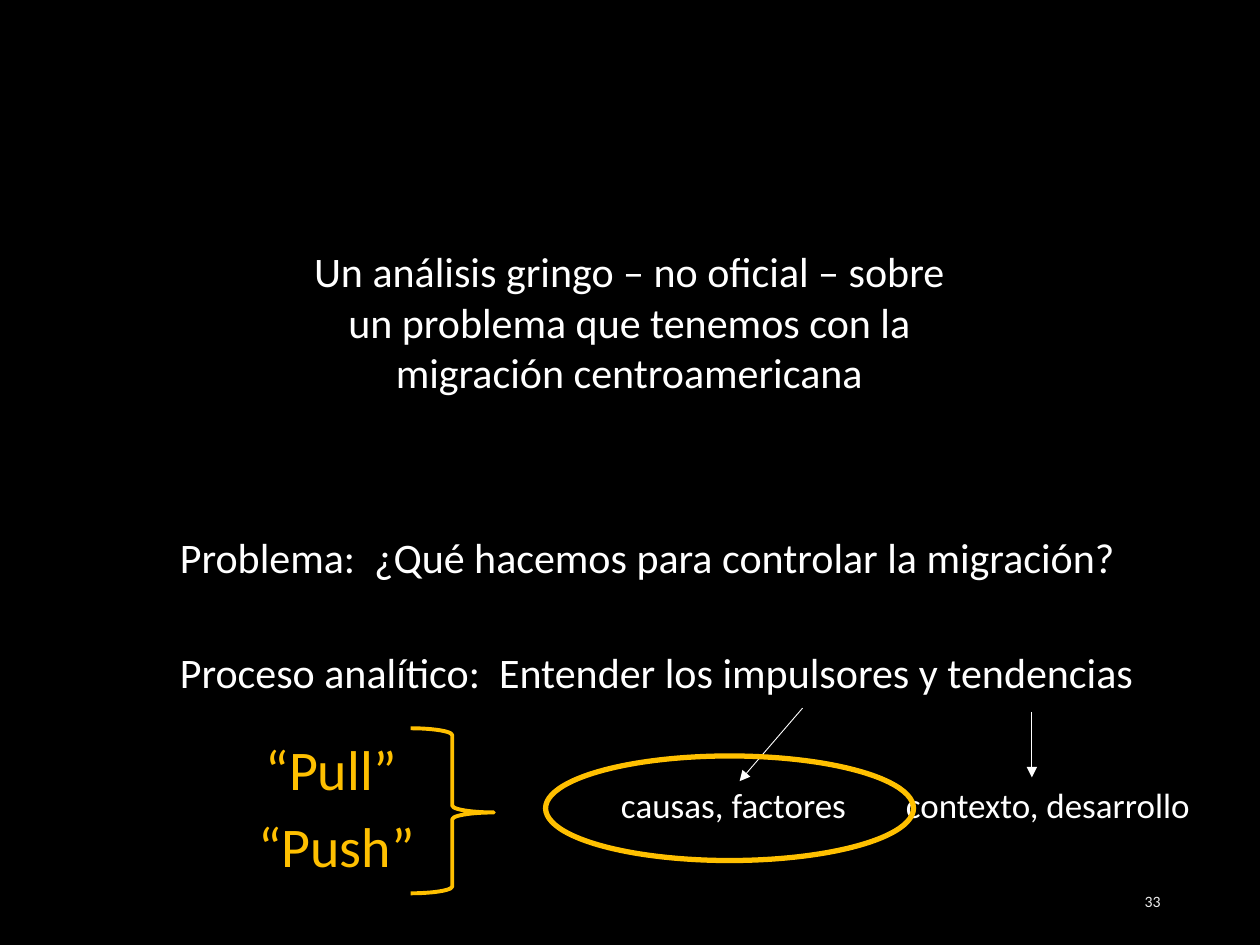
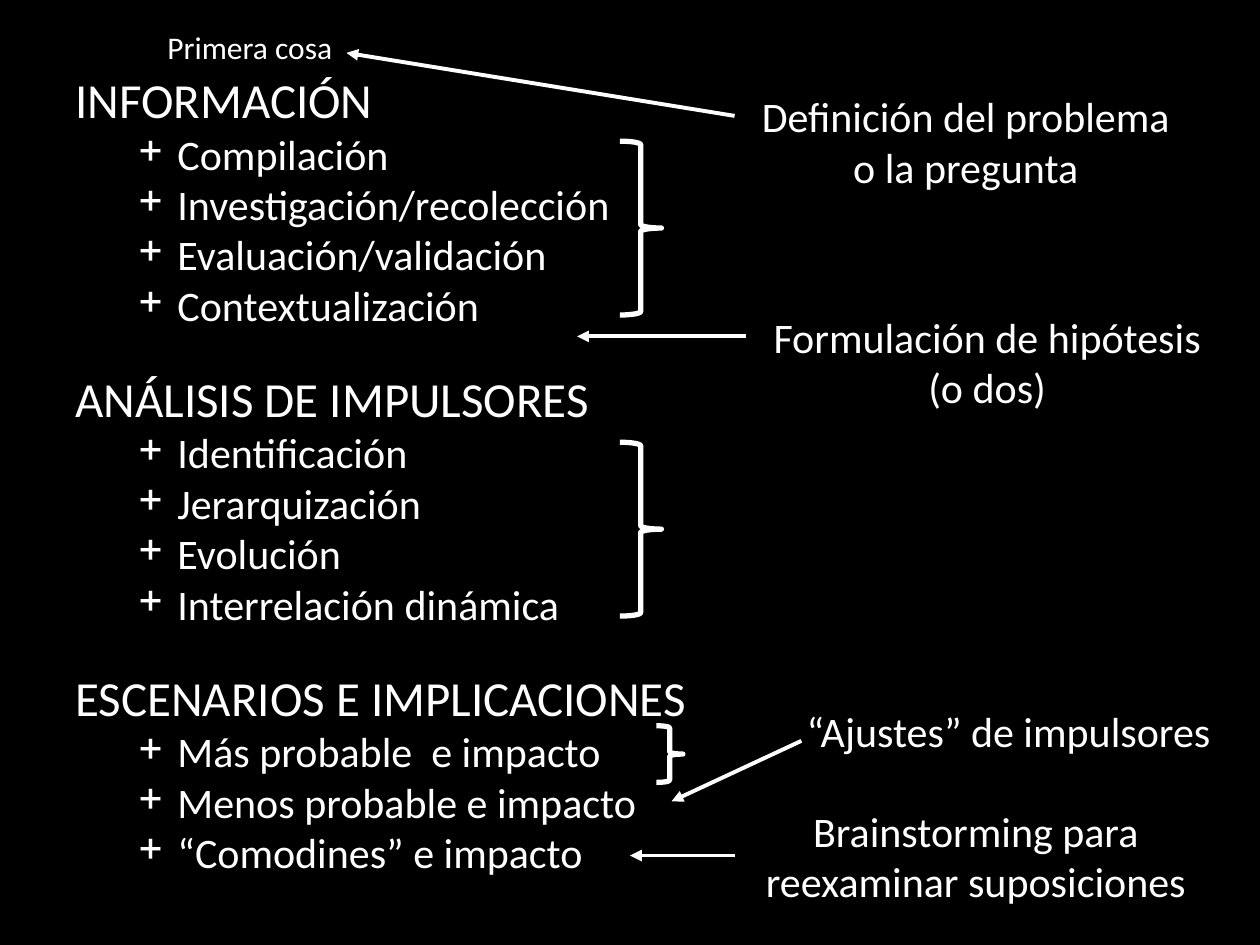
import collections

import pptx
import pptx.dml.color
import pptx.enum.shapes
import pptx.enum.text
import pptx.oxml.ns
import pptx.util
from lxml import etree

Inches = pptx.util.Inches
Pt = pptx.util.Pt
ALIGN = pptx.enum.text.PP_ALIGN
ANCHOR = pptx.enum.text.MSO_ANCHOR
SHAPE = pptx.enum.shapes.MSO_SHAPE
qn = pptx.oxml.ns.qn

BLACK = pptx.dml.color.RGBColor(0x00, 0x00, 0x00)
WHITE = pptx.dml.color.RGBColor(0xFF, 0xFF, 0xFF)
PALE = pptx.dml.color.RGBColor(0xED, 0xED, 0xED)
AMBER = pptx.dml.color.RGBColor(0xFF, 0xC0, 0x00)
FONT = "Calibri"

Box = collections.namedtuple("Box", "left top width height")

STAGES = [
    ("INFORMACIÓN", ["Compilación", "Investigación/recolección",
                     "Evaluación/validación", "Contextualización"]),
    ("ANÁLISIS DE IMPULSORES", ["Identificación", "Jerarquización",
                                "Evolución", "Interrelación dinámica"]),
    ("ESCENARIOS E IMPLICACIONES", ["Más probable  e impacto",
                                    "Menos probable e impacto",
                                    "“Comodines” e impacto"]),
]


# Shared helpers
def inside(box, left, top, width, height):
    """Turn offsets from the corner of a box into a box on the page."""
    return Box(box.left + left, box.top + top, width, height)


def apply(target, values):
    for name, value in values.items():
        setattr(target, name, value)


def write(para, text, size, color=WHITE):
    para.text = text
    for span in para.runs:
        apply(span.font, {"name": FONT, "size": Pt(size)})
        span.font.color.rgb = color


def add_frame(page, box, wrap=True):
    frame = page.shapes.add_textbox(*map(Inches, box)).text_frame
    frame.word_wrap = wrap
    return frame


def add_text(page, box, text, size=24, color=WHITE, align=ALIGN.LEFT, wrap=False):
    frame = add_frame(page, box, wrap)
    write(frame.paragraphs[0], text, size, color)
    frame.paragraphs[0].alignment = align
    return frame


def add_outline(page, kind, box, color, width):
    shape = page.shapes.add_shape(kind, *map(Inches, box))
    shape.shadow.inherit = False
    shape.fill.background()
    shape.line.color.rgb = color
    shape.line.width = Pt(width)
    return shape


def add_arrow(page, box, start, end, width):
    points = [box.left + start[0], box.top + start[1],
              box.left + end[0], box.top + end[1]]
    arrow = page.shapes.add_connector(
        pptx.enum.shapes.MSO_CONNECTOR.STRAIGHT, *map(Inches, points))
    arrow.line.color.rgb = WHITE
    arrow.line.width = Pt(width)
    properties = arrow.element.spPr
    etree.SubElement(properties.find(qn("a:ln")), qn("a:tailEnd"), type="triangle")
    etree.SubElement(properties, qn("a:effectLst"))


def add_page(deck):
    page = deck.slides.add_slide(deck.slide_layouts[6])
    page.background.fill.solid()
    page.background.fill.fore_color.rgb = BLACK
    return page


# Regions of the migration slide
def add_statements(page, box):
    add_text(page, inside(box, 1, 0, 5.33, 1.31),
             "Un análisis gringo – no oficial – sobre un problema que tenemos "
             "con la migración centroamericana", align=ALIGN.CENTER, wrap=True)
    add_text(page, inside(box, 0, 2.27, 7.76, 0.5),
             "Problema:  ¿Qué hacemos para controlar la migración?")
    add_text(page, inside(box, 0, 3.18, 8.07, 0.5),
             "Proceso analítico:  Entender los impulsores y tendencias")


def add_drivers(page, box):
    add_text(page, inside(box, 0, 0.55, 2.05, 0.44), "causas, factores", 20)
    add_text(page, inside(box, 2.26, 0.55, 2.52, 0.44), "contexto, desarrollo", 20)
    add_arrow(page, box, (1.54, 0), (1.04, 0.58), 0.5)
    add_arrow(page, box, (3.36, 0.03), (3.36, 0.55), 0.5)


def add_forces(page, box):
    add_outline(page, SHAPE.OVAL, inside(box, 2.38, 0.22, 2.92, 0.83), AMBER, 3)
    add_text(page, inside(box, 0.06, 0, 1.25, 0.64), "“Pull”", 32, AMBER)
    add_text(page, inside(box, 0, 0.61, 1.47, 0.64), "“Push”", 32, AMBER)
    brace = add_outline(page, SHAPE.RIGHT_BRACE,
                        inside(box, 1.31, 0, 0.66, 1.31), AMBER, 2.25)
    brace.adjustments[1] = 0.51


def build_migration(deck):
    page = add_page(deck)
    number = add_text(page, Box(7.06, 6.95, 2.25, 0.4), "33", 9, PALE,
                      ALIGN.RIGHT, wrap=True)
    number.vertical_anchor = ANCHOR.MIDDLE
    add_statements(page, Box(1.33, 1.9, 8.07, 3.68))
    add_drivers(page, Box(4.83, 5.62, 4.78, 0.99))
    add_forces(page, Box(1.95, 5.78, 5.3, 1.31))


# Regions of the method slide
def add_bullet(para, text):
    para.level = 1
    properties = para._p.get_or_add_pPr()
    properties.set("marL", str(Inches(0.81)))
    properties.set("indent", str(Inches(-0.31)))
    etree.SubElement(properties, qn("a:buChar"), char="+")
    write(para, text, 24)


def add_stages(page, box):
    frame = add_frame(page, box)
    for index, (heading, steps) in enumerate(STAGES):
        para = frame.add_paragraph() if index else frame.paragraphs[0]
        write(para, heading, 28)
        if index:
            para.space_before = Pt(22)
        for step in steps:
            add_bullet(frame.add_paragraph(), step)


def add_braces(page, box):
    for left, top, width, height in [(0, 0, 0.33, 1.38), (0, 2.39, 0.33, 1.38),
                                     (0.29, 4.64, 0.21, 0.45)]:
        add_outline(page, SHAPE.RIGHT_BRACE,
                    inside(box, left, top, width, height), WHITE, 3)


def add_callout(page, box, text, start, end):
    add_text(page, box, text, align=ALIGN.CENTER, wrap=True)
    add_arrow(page, box, start, end, 2.25)


def build_method(deck):
    page = add_page(deck)
    add_stages(page, Box(0.5, 0.5, 5.92, 6.7))
    # Callouts, with arrow ends measured from each box
    for box, text, start, end in [
        (Box(5.92, 2.42, 3.83, 0.91), "Formulación de hipótesis (o dos)",
         (0, 0.25), (-1.34, 0.25)),
        (Box(6.14, 5.55, 3.73, 0.61), "“Ajustes” de impulsores",
         (0.22, 0.33), (-0.81, 0.81)),
        (Box(5.83, 6.34, 3.83, 0.91), "Brainstorming para reexaminar suposiciones",
         (0, 0.45), (-0.83, 0.45)),
        (Box(5.75, 0.67, 3.83, 0.91), "Definición del problema\vo la pregunta",
         (0.08, 0.25), (-3, -0.25)),
    ]:
        add_callout(page, box, text, start, end)
    add_text(page, Box(1.23, 0.17, 1.52, 0.4), "Primera cosa", 18)
    add_braces(page, Box(4.92, 1.12, 0.5, 5.09))


def main():
    deck = pptx.Presentation()
    apply(deck, {"slide_width": Inches(10), "slide_height": Inches(7.5)})
    build_migration(deck)
    build_method(deck)
    deck.save("out.pptx")


if __name__ == "__main__":
    main()
